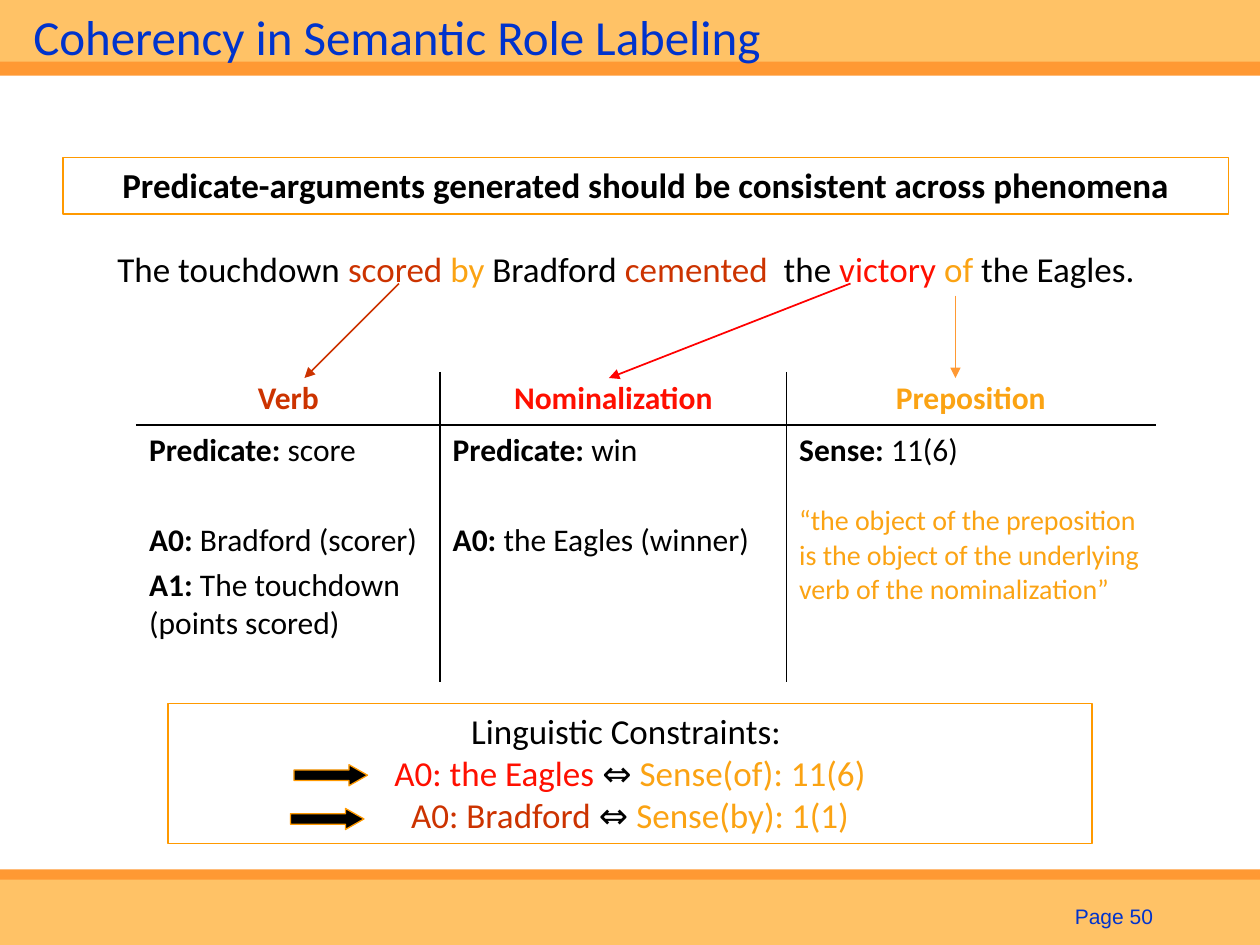
from lxml import etree
from pptx import Presentation
from pptx.dml.color import RGBColor
from pptx.enum.shapes import MSO_CONNECTOR, MSO_SHAPE
from pptx.enum.text import MSO_ANCHOR, PP_ALIGN
from pptx.oxml.ns import qn
from pptx.util import Pt

BLACK = RGBColor(0, 0, 0)
WHITE = RGBColor(0xFF, 0xFF, 0xFF)
BLUE = RGBColor(0x00, 0x33, 0xCC)
DEEP = RGBColor(0xFF, 0x99, 0x33)
PALE = RGBColor(0xFF, 0xC2, 0x66)
EDGE = RGBColor(0xFF, 0x99, 0x00)
RUST = RGBColor(0xCC, 0x33, 0x00)
RED = RGBColor(0xFF, 0x0F, 0x00)
PURE = RGBColor(0xFF, 0x00, 0x00)
GOLD = RGBColor(0xFB, 0xA3, 0x13)

WIDE, HIGH = 720, 540
LEFT, MID, RIGHT = PP_ALIGN.LEFT, PP_ALIGN.CENTER, PP_ALIGN.RIGHT


def add_para(frame, runs, size, align=LEFT, font="Calibri", bold=None, gap=0):
    """Add a paragraph; each run is (text, colour) or (text, colour, bold)."""
    para = frame.paragraphs[0]
    if para.runs:
        para = frame.add_paragraph()
    para.alignment = align
    para.space_before = Pt(gap)
    para.font.size = Pt(size)
    para.font.name = font
    para.font.bold = bold
    for text, color, *heavy in runs:
        run = para.add_run()
        run.text = text
        run.font.color.rgb = color
        if heavy:
            run.font.bold = heavy[0]


def add_shape(slide, box, fill, line=None, weight=1, kind=MSO_SHAPE.RECTANGLE):
    shape = slide.shapes.add_shape(kind, *map(Pt, box))
    shape.shadow.inherit = False
    shape.fill.solid()
    shape.fill.fore_color.rgb = fill
    if line is None:
        shape.line.fill.background()
    else:
        shape.line.color.rgb = line
        shape.line.width = Pt(weight)
    return shape


def add_text(slide, box, runs, size, anchor=MSO_ANCHOR.TOP, **style):
    frame = slide.shapes.add_textbox(*map(Pt, box)).text_frame
    frame.word_wrap = True
    frame.vertical_anchor = anchor
    add_para(frame, runs, size, **style)


def add_panel(slide, box, lines, bold=None):
    frame = add_shape(slide, box, WHITE, EDGE).text_frame
    frame.word_wrap = True
    frame.vertical_anchor = MSO_ANCHOR.TOP
    for runs in lines:
        add_para(frame, runs, 20, MID, bold=bold)


def add_arrow(slide, start, end, color):
    line = slide.shapes.add_connector(
        MSO_CONNECTOR.STRAIGHT, *map(Pt, start + end))
    line.line.color.rgb = color
    line.line.width = Pt(1)
    edge = line.line._get_or_add_ln()
    etree.SubElement(edge, qn("a:tailEnd"), type="triangle")
    etree.SubElement(line._element.spPr, qn("a:effectLst"))


def add_border(cell, side):
    props = cell._tc.get_or_add_tcPr()
    edge = etree.SubElement(props, qn("a:ln" + side), w=str(Pt(1)))
    fill = etree.SubElement(edge, qn("a:solidFill"))
    etree.SubElement(fill, qn("a:srgbClr"), val=str(BLACK))


def add_bands(slide, box):
    """Header and footer: a pale band with a deep strip on its inner side."""
    x, y, w, h = box
    foot = y + h
    add_shape(slide, (x, foot - 43.2, w, 43.2), DEEP)
    add_shape(slide, (x, y, w, 43.2), DEEP)
    add_shape(slide, (x, y, w, 35.3), PALE)
    add_shape(slide, (x, foot - 37.4, w, 37.4), PALE)
    add_text(slide, (x + 12, y - 0.5, 648, 42),
             [("Coherency in Semantic Role Labeling", BLUE)], 28,
             MSO_ANCHOR.MIDDLE)
    add_text(slide, (x + 594, foot - 24, 72, 18), [("Page 50", BLUE)], 12,
             MSO_ANCHOR.BOTTOM, align=RIGHT, font="Arial")


def add_roles(slide, box):
    """Table of phenomena, ruled only between its cells."""
    x, y, w, h = box
    heads = [("Verb", RUST), ("Nominalization", RED), ("Preposition", GOLD)]
    # Each entry: label, value, space before
    bodies = [
        [("Predicate: ", "score", 0), ("A0: ", "Bradford (scorer)", 29.3),
         ("A1: ", "The touchdown (points scored)", 3.6)],
        [("Predicate: ", "win", 0), ("A0: ", "the Eagles (winner)", 29.3)],
        [("Sense: ", "11(6)", 0)],
    ]
    table = slide.shapes.add_table(2, 3, *map(Pt, box)).table
    table.first_row = table.horz_banding = False
    for col, size in zip(table.columns, (173.5, 198, w - 371.5)):
        col.width = Pt(size)
    table.rows[0].height = Pt(30)
    table.rows[1].height = Pt(h - 30)

    for i, (head, body) in enumerate(zip(heads, bodies)):
        top, low = table.cell(0, i), table.cell(1, i)
        add_para(top.text_frame, [head], 18, MID, bold=True)
        for label, value, gap in body:
            add_para(low.text_frame,
                     [(label, BLACK, True), (value, BLACK)], 18, gap=gap)
        for cell, inner in ((top, "B"), (low, "T")):
            sides = ("L" if i > 0 else "") + ("R" if i < 2 else "") + inner
            for side in sides:
                add_border(cell, side)
            cell.fill.background()
    quote = ("“the object of the preposition is the object of the "
             "underlying verb of the nominalization”")
    add_para(table.cell(1, 2).text_frame, [(quote, GOLD)], 16, gap=19.5)


def add_example(slide, box):
    """Sample sentence with arrows down to the table."""
    x, y, w, h = box
    add_text(slide, box, [
        ("The touchdown ", BLACK), ("scored ", RUST), ("by ", GOLD),
        ("Bradford ", BLACK), ("cemented", RUST), ("  the ", BLACK),
        ("victory ", RED), ("of", GOLD), (" the Eagles.", BLACK)], 20)
    for start, drop, end, color in (
            (168, 24, 114, RUST), (426, 24, 288, PURE), (486, 31, 486, DEEP)):
        add_arrow(slide, (x + start, y + drop), (x + end, y + 78), color)


def add_rules(slide, box):
    """Linguistic constraints, with a block arrow beside each rule."""
    x, y, w, h = box
    add_panel(slide, box, [
        [("Linguistic Constraints: ", BLACK)],
        [("A0: the Eagles ", RED), ("⇔ ", BLACK), ("Sense(of): 11(6)", GOLD)],
        [("A0: Bradford ", RUST), ("⇔ ", BLACK), ("Sense(by): 1(1)", GOLD)]])
    for dx, dy in ((72, 35), (70, 60)):
        arrow = add_shape(slide, (x + dx, y + dy, 42, 12), BLACK, EDGE, 0.75,
                          MSO_SHAPE.RIGHT_ARROW)
        arrow.adjustments[0] = 0.5
        arrow.adjustments[1] = 0.88


def main():
    deck = Presentation()
    deck.slide_width, deck.slide_height = Pt(WIDE), Pt(HIGH)
    slide = deck.slides.add_slide(deck.slide_layouts[6])
    add_bands(slide, (0, 0, WIDE, HIGH))
    claim = "Predicate-arguments generated should be consistent across phenomena"
    add_panel(slide, (36, 90, 666, 32.4), [[(claim, BLACK)]], bold=True)
    add_roles(slide, (78, 213, 582, 177))
    add_example(slide, (60, 138, 606, 31))
    add_rules(slide, (96, 402, 528, 80))
    deck.save("out.pptx")


if __name__ == "__main__":
    main()
